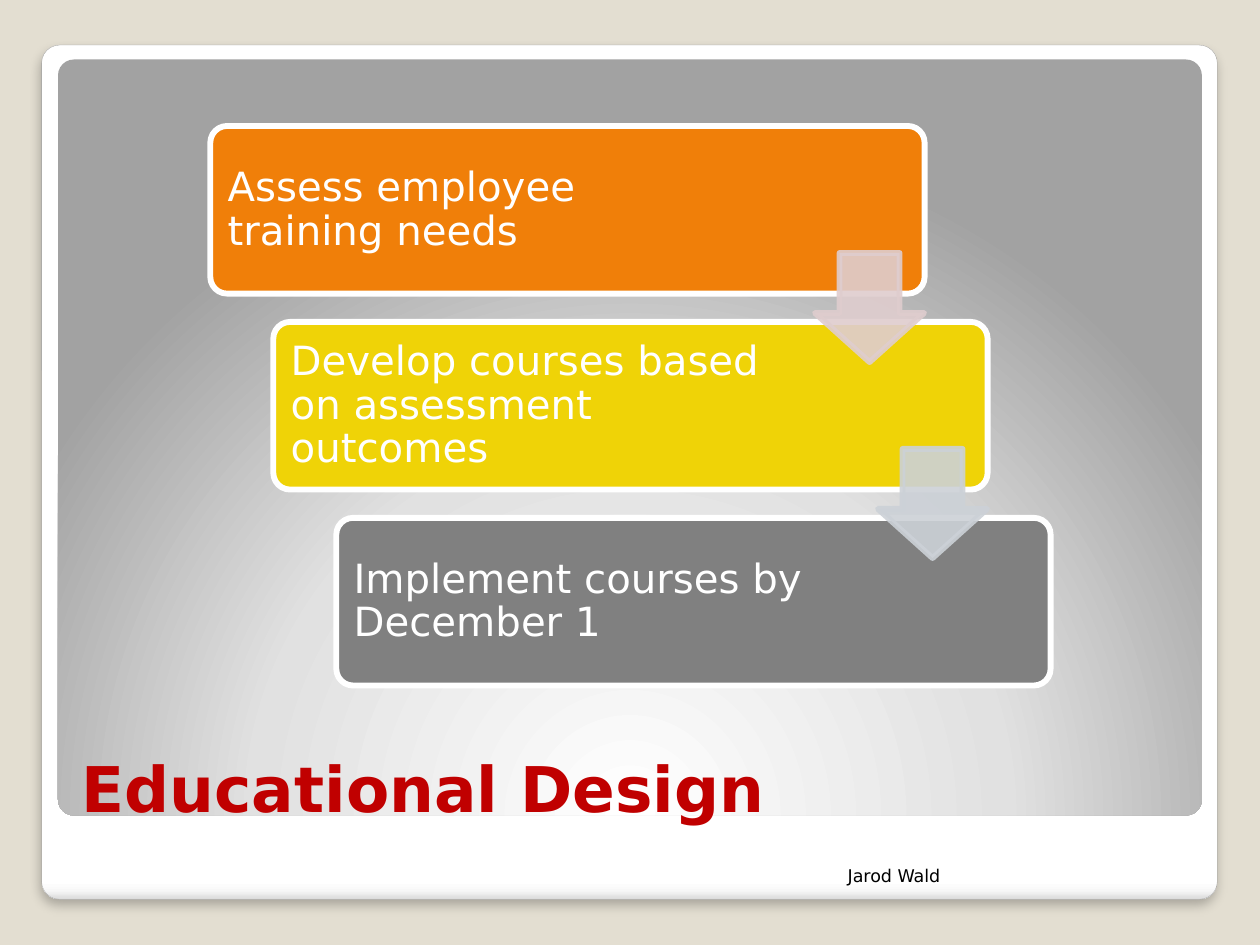
from lxml import etree
from pptx import Presentation
from pptx import util as u
from pptx.dml.color import RGBColor
from pptx.enum import shapes, text
from pptx.oxml import parse_xml
from pptx.oxml.ns import nsdecls, qn

Cm = u.Cm
FONT = "DejaVu Sans"
BEIGE = RGBColor(0xE3, 0xDE, 0xD1)
WHITE = RGBColor(0xFF, 0xFF, 0xFF)
BLACK = RGBColor(0, 0, 0)
RED = RGBColor(0xC0, 0, 0)
FRAME_LINE = RGBColor(0xA4, 0xA4, 0xA4)
ORANGE = RGBColor(0xF0, 0x7F, 0x09)
YELLOW = RGBColor(0xEF, 0xD3, 0x07)
GRAY = RGBColor(0x80, 0x80, 0x80)
PINK = RGBColor(0xDF, 0xCD, 0xCE)
BLUE_GRAY = RGBColor(0xCC, 0xD1, 0xD7)
PALE, SILVER = RGBColor(0xF7, 0xF7, 0xF7), RGBColor(0xDA, 0xDA, 0xDA)
LIGHT, DARK = RGBColor(0xE1, 0xE1, 0xE1), RGBColor(0xA2, 0xA2, 0xA2)

STEPS = [
    ("Assess employee training needs", ORANGE),
    ("Develop courses based on assessment outcomes", YELLOW),
    ("Implement courses by December 1", GRAY),
]
ARROWS = [PINK, BLUE_GRAY]
STEP_X, STEP_Y = 1.27, 3.95
LINEAR = '<a:lin ang="5400000" scaled="0"/>'
CIRCLE = ('<a:path path="circle"><a:fillToRect l="50000" t="175000" '
          'r="50000" b="-75000"/></a:path>')


def add_preset(slide, kind, box, adjustments, fill=None, line=None, width=3.35):
    sp = slide.shapes.add_shape(kind, *map(Cm, box))
    sp.shadow.inherit = False
    for i, value in enumerate(adjustments):
        sp.adjustments[i] = value
    if fill is None:
        sp.fill.background()
    else:
        sp.fill.solid()
        sp.fill.fore_color.rgb = fill
    if line is None:
        sp.line.fill.background()
    else:
        sp.line.color.rgb = line
        sp.line.width = u.Pt(width)
    return sp


def set_gradient(sp, stops, direction):
    """Replace the empty fill by a gradient of (percent, colour) stops."""
    gs = "".join(f'<a:gs pos="{pos * 1000}"><a:srgbClr val="{color}"/></a:gs>'
                 for pos, color in stops)
    grad = parse_xml(f'<a:gradFill {nsdecls("a")} rotWithShape="1">'
                     f'<a:gsLst>{gs}</a:gsLst>{direction}</a:gradFill>')
    props = sp._element.spPr
    props.replace(props.find(qn("a:noFill")), grad)


def add_soft_shadow(sp):
    effects = sp._element.spPr.find(qn("a:effectLst"))
    effects.append(parse_xml(
        f'<a:outerShdw {nsdecls("a")} blurRad="{u.Pt(6)}" dist="{u.Pt(4)}" '
        'dir="5400000" algn="tl" rotWithShape="0"><a:srgbClr val="000000">'
        '<a:alpha val="25000"/></a:srgbClr></a:outerShdw>'))


def set_opacity(sp, percent):
    """Apply the same opacity to fill and line."""
    for color in sp._element.spPr.iter(qn("a:srgbClr")):
        etree.SubElement(color, qn("a:alpha")).set("val", str(percent * 1000))


def add_text(slide, box, words, size, color, bold=False,
             anchor=text.MSO_ANCHOR.BOTTOM):
    tf = slide.shapes.add_textbox(*map(Cm, box)).text_frame
    tf.word_wrap = True
    tf.vertical_anchor = anchor
    p = tf.paragraphs[0]
    p.text = words
    p.font.name = FONT
    p.font.size = u.Pt(size)
    p.font.bold = bold
    p.font.color.rgb = color
    return tf


def add_frame(slide):
    rounded = shapes.MSO_SHAPE.ROUNDED_RECTANGLE
    card = add_preset(slide, rounded, (0.84, 0.91, 23.7, 17.22), [0.021],
                      line=FRAME_LINE, width=0.16)
    set_gradient(card, [(0, WHITE), (98, WHITE), (99, PALE), (100, SILVER)], LINEAR)
    add_soft_shadow(card)
    panel = add_preset(slide, rounded, (1.17, 1.2, 23.06, 15.24), [0.021])
    set_gradient(panel, [(0, WHITE), (55, LIGHT), (100, DARK)], CIRCLE)


def add_step(slide, i, words, color):
    x, y = 4.24 + i * STEP_X, 2.54 + i * STEP_Y
    add_preset(slide, shapes.MSO_SHAPE.ROUNDED_RECTANGLE,
               (x, y, 14.4, 3.38), [0.1], color, WHITE)
    tf = add_text(slide, (x + 0.1, y + 0.1, 10.73, 3.2), words, 23, WHITE,
                  anchor=text.MSO_ANCHOR.MIDDLE)
    tf.margin_left = tf.margin_right = tf.margin_top = tf.margin_bottom = Cm(0.25)
    tf.paragraphs[0].line_spacing = 0.9


def add_arrow(slide, i, color):
    box = (16.43 + i * STEP_X, 5.1 + i * STEP_Y, 2.2, 2.2)
    sp = add_preset(slide, shapes.MSO_SHAPE.DOWN_ARROW, box, [0.55, 0.45],
                    color, color)
    set_opacity(sp, 90)


def main():
    prs = Presentation()
    prs.slide_width, prs.slide_height = Cm(25.4), Cm(19.05)
    slide = prs.slides.add_slide(prs.slide_layouts[6])
    slide.background.fill.solid()
    slide.background.fill.fore_color.rgb = BEIGE
    add_frame(slide)
    add_text(slide, (1.4, 13.84, 22.73, 2.92), "Educational Design", 36, RED, bold=True)
    add_text(slide, (16.84, 16.97, 6.35, 1.02), "Jarod Wald", 10, BLACK)
    for i, (words, color) in enumerate(STEPS):
        add_step(slide, i, words, color)
    for i, color in enumerate(ARROWS):
        add_arrow(slide, i, color)
    prs.save("out.pptx")


if __name__ == "__main__":
    main()
